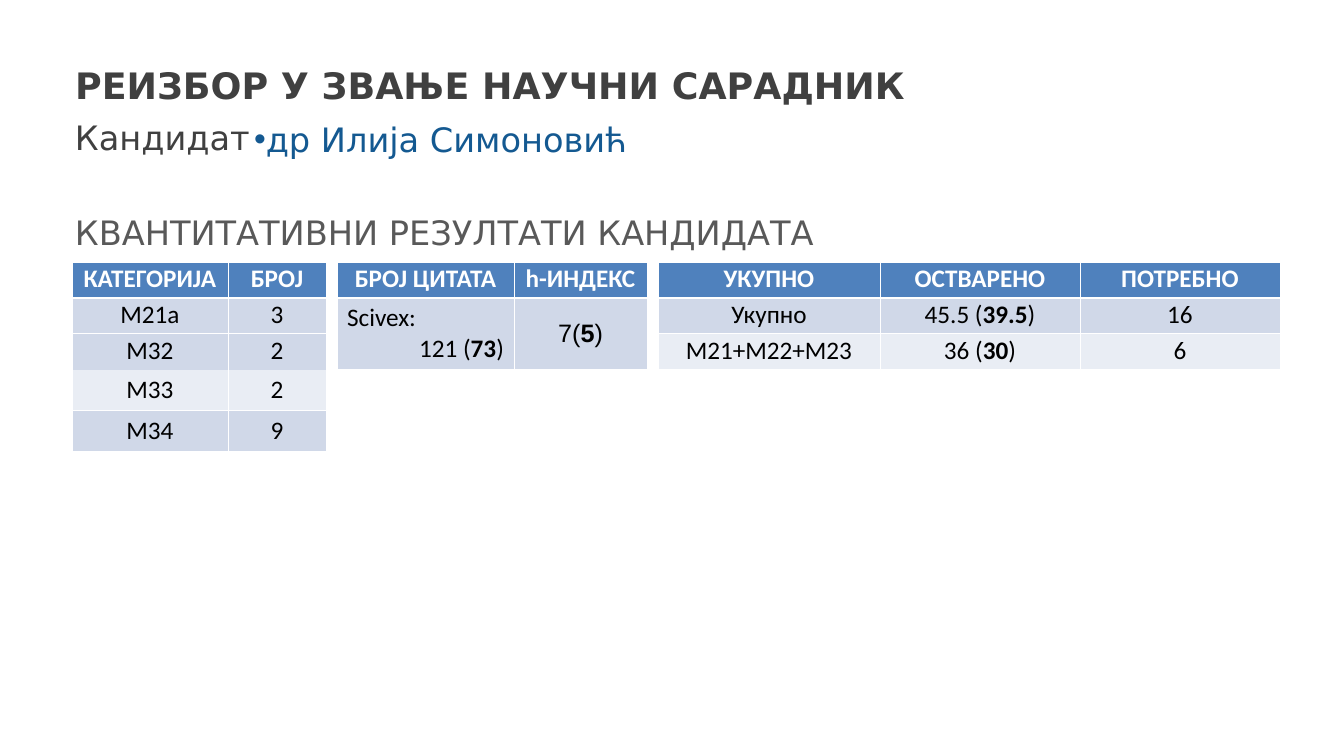
import lxml.etree
import pptx
import pptx.dml.color
import pptx.enum.text
import pptx.oxml.ns
import pptx.util

ALIGN = pptx.enum.text.PP_ALIGN
ANCHOR = pptx.enum.text.MSO_ANCHOR
EMU_PER_PX = 914400 / 100.8
SLIDE_SIZE = (1344, 756)

TITLE = ("РЕИЗБОР У ЗВАЊЕ НАУЧНИ САРАДНИК", (65, 54, 1216, 58))
CANDIDATE_LABEL = ("Кандидат", (65, 112, 1216, 50))
CANDIDATE = ("др Илија Симоновић", (244, 113, 680, 48))
SECTION = ("КВАНТИТАТИВНИ РЕЗУЛТАТИ КАНДИДАТА", (65, 199, 1216, 58))

HEADING_FONT = "DejaVu Sans"
HEADER, DARK, LIGHT = "4F81BD", "D0D8E8", "E9EDF4"
TABLE_TOP = 262
THIN, THICK = 0.45, 1.47
TIGHT = 0.83

# Text between asterisks is bold; a line break starts a new paragraph.
TABLES = [
    {
        "left": 658, "columns": [222, 200, 200], "heights": [35, 36, 35],
        "fills": [HEADER, DARK, LIGHT], "anchor": ANCHOR.TOP, "tight_rows": 3,
        "rows": [
            ["*УКУПНО*", "*ОСТВАРЕНО*", "*ПОТРЕБНО*"],
            ["Укупно", "45.5 (*39.5*)", "16"],
            ["М21+М22+М23", "36 (*30*)", "6"],
        ],
    },
    {
        "left": 72, "columns": [156, 98], "heights": [35, 36, 36, 41, 41],
        "fills": [HEADER, DARK, DARK, LIGHT, DARK], "anchor": ANCHOR.MIDDLE,
        "tight_rows": 3, "unlined_below": 2,
        "rows": [
            ["*КАТЕГОРИЈА*", "*БРОЈ*"],
            ["М21а", "3"],
            ["М32", "2"],
            ["М33", "2"],
            ["М34", "9"],
        ],
    },
    {
        "left": 337, "columns": [177, 133], "heights": [35, 72],
        "fills": [HEADER, DARK], "anchor": ANCHOR.MIDDLE, "tight_rows": 1,
        "rows": [
            ["*БРОЈ ЦИТАТА*", "*h-ИНДЕКС*"],
            ["Scivex:\n121 (*73*)", "7(*5*)"],
        ],
        "aligns": {(1, 0): [ALIGN.LEFT, ALIGN.RIGHT]},
        "fonts": {(1, 1): "Arial"},
    },
]


def px(length):
    return pptx.util.Emu(round(length * EMU_PER_PX))


def rgb(value):
    return pptx.dml.color.RGBColor.from_string(value)


def write(frame, text, font, size, color, aligns=(ALIGN.LEFT,), spacing=None,
          anchor=None, bold=False, bullet=None):
    """Fill a text frame; asterisks in the text switch bold on and off."""
    frame.word_wrap = True
    if anchor is not None:
        frame.vertical_anchor = anchor
    for index, line in enumerate(text.split("\n")):
        para = frame.paragraphs[0] if index == 0 else frame.add_paragraph()
        para.alignment = aligns[index % len(aligns)]
        if spacing:
            para.line_spacing = spacing
        if bullet:
            add_bullet(para, bullet)
        for part, words in enumerate(line.split("*")):
            if words:
                span = para.add_run()
                span.text = words
                span.font.name = font
                span.font.size = pptx.util.Pt(size)
                span.font.bold = bold or part % 2 == 1
                span.font.color.rgb = rgb(color)


def add_bullet(para, symbol):
    properties = para._p.get_or_add_pPr()
    properties.set("marL", "0")
    properties.set("indent", "0")
    for tag, key, value in (("a:buFont", "typeface", "Arial"),
                            ("a:buChar", "char", symbol)):
        node = lxml.etree.SubElement(properties, pptx.oxml.ns.qn(tag))
        node.set(key, value)


def add_heading(shape, content, **style):
    text, bounds = content
    shape.left, shape.top, shape.width, shape.height = map(px, bounds)
    shape.text_frame.auto_size = pptx.enum.text.MSO_AUTO_SIZE.NONE
    write(shape.text_frame, text, font=HEADING_FONT, **style)


def set_borders(cell, top, bottom):
    """Draw white cell edges; a width of zero hides the edge."""
    properties = cell._tc.get_or_add_tcPr()
    for side, width in (("L", THIN), ("R", THIN), ("T", top), ("B", bottom)):
        edge = lxml.etree.SubElement(properties, pptx.oxml.ns.qn("a:ln" + side))
        edge.set("w", str(pptx.util.Pt(width)))
        paint = "a:solidFill" if width else "a:noFill"
        fill = lxml.etree.SubElement(edge, pptx.oxml.ns.qn(paint))
        if width:
            color = lxml.etree.SubElement(fill, pptx.oxml.ns.qn("a:srgbClr"))
            color.set("val", "FFFFFF")


def add_result_table(page, data):
    columns, heights = data["columns"], data["heights"]
    bounds = (data["left"], TABLE_TOP, sum(columns), sum(heights))
    table = page.shapes.add_table(len(heights), len(columns), *map(px, bounds)).table
    table.first_row = table.horz_banding = False
    for column, width in zip(table.columns, columns):
        column.width = px(width)
    edges = [THIN, THICK] + [THIN] * (len(heights) - 1)
    if "unlined_below" in data:
        edges[data["unlined_below"] + 1] = 0
    for row, texts in enumerate(data["rows"]):
        table.rows[row].height = px(heights[row])
        for column, text in enumerate(texts):
            cell = table.cell(row, column)
            place = (row, column)
            set_borders(cell, edges[row], edges[row + 1])
            cell.fill.solid()
            cell.fill.fore_color.rgb = rgb(data["fills"][row])
            cell.vertical_anchor = data["anchor"]
            write(cell.text_frame, text, size=18,
                  font=data.get("fonts", {}).get(place, "Calibri"),
                  color="000000" if row else "FFFFFF",
                  aligns=data.get("aligns", {}).get(place, [ALIGN.CENTER]),
                  spacing=TIGHT if row < data["tight_rows"] else None)


def main():
    deck = pptx.Presentation()
    deck.slide_width, deck.slide_height = map(px, SLIDE_SIZE)
    page = deck.slides.add_slide(deck.slide_layouts[1])
    add_heading(page.shapes.title, TITLE, size=26, color="404040", bold=True,
                anchor=ANCHOR.BOTTOM)
    add_heading(page.placeholders[1], CANDIDATE, size=24, color="145991",
                spacing=1.1, anchor=ANCHOR.MIDDLE, bullet="•")
    for content, color, anchor in ((CANDIDATE_LABEL, "404040", ANCHOR.TOP),
                                   (SECTION, "595959", ANCHOR.BOTTOM)):
        box = page.shapes.add_textbox(*map(px, content[1]))
        add_heading(box, content, size=24, color=color, anchor=anchor)
    for data in TABLES:
        add_result_table(page, data)
    deck.save("out.pptx")


if __name__ == "__main__":
    main()
